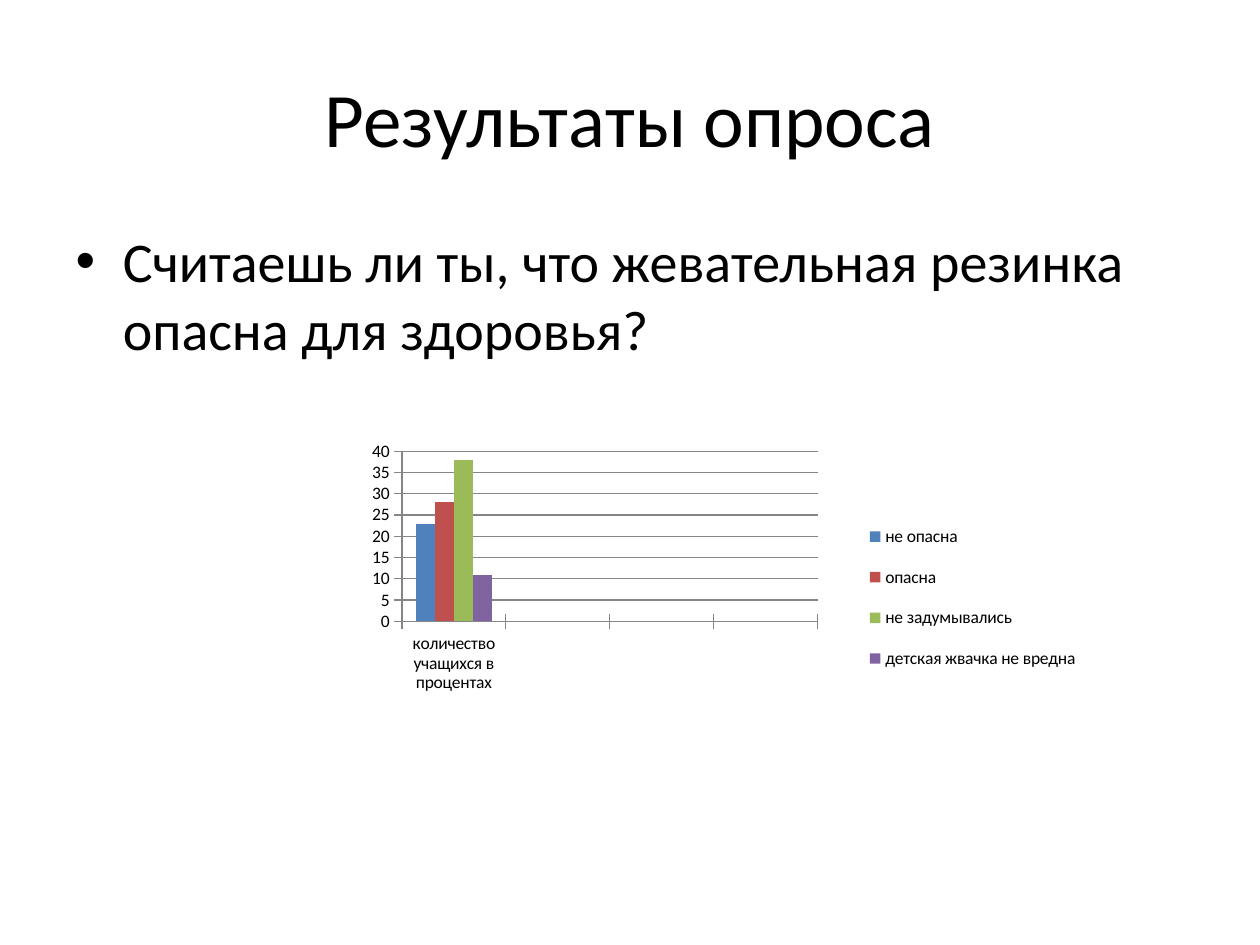
import dataclasses

import lxml.etree
import pptx
import pptx.chart.data
import pptx.dml.color
import pptx.enum.chart
import pptx.enum.text
import pptx.oxml.ns
import pptx.util

Inches = pptx.util.Inches
Pt = pptx.util.Pt


@dataclasses.dataclass(frozen=True)
class Theme:
    font: str = "Calibri"
    text: str = "000000"
    grid: str = "868686"
    series: tuple = ("4F81BD", "C0504D", "9BBB59", "8064A2")
    title_size: int = 44
    body_size: int = 32
    chart_size: int = 10


THEME = Theme()
CATEGORIES = ("количество учащихся в процентах", "", "", "")
ANSWERS = (
    ("не опасна", 23),
    ("опасна", 28),
    ("не задумывались", 38),
    ("детская жвачка не вредна", 11),
)


def rgb(value):
    return pptx.dml.color.RGBColor.from_string(value)


def style_font(font, size):
    font.name = THEME.font
    font.size = Pt(size)
    font.color.rgb = rgb(THEME.text)


def fill_placeholder(sp, box, text, size, anchor):
    sp.left, sp.top, sp.width, sp.height = (Inches(v) for v in box)
    tf = sp.text_frame
    tf.text = text
    tf.word_wrap = True
    tf.vertical_anchor = anchor
    p = tf.paragraphs[0]
    style_font(p.runs[0].font, size)
    return p


def add_title(slide, box, text):
    p = fill_placeholder(slide.shapes.title, box, text, THEME.title_size,
                         pptx.enum.text.MSO_ANCHOR.MIDDLE)
    p.alignment = pptx.enum.text.PP_ALIGN.CENTER


def add_question(slide, box, text):
    # The bullet and hanging indent come from the body placeholder
    p = fill_placeholder(slide.placeholders[1], box, text, THEME.body_size,
                         pptx.enum.text.MSO_ANCHOR.TOP)
    p.space_before = Pt(0)


def set_layout(parent, position, fractions, inner=False):
    """Place a chart part by fractions of the chart area: x, y, w, h."""
    qn = pptx.oxml.ns.qn
    for old in parent.findall(qn("c:layout")):
        parent.remove(old)
    layout = lxml.etree.Element(qn("c:layout"))
    manual = lxml.etree.SubElement(layout, qn("c:manualLayout"))
    settings = [("layoutTarget", "inner")] if inner else []
    settings += [("xMode", "edge"), ("yMode", "edge")]
    settings += zip("xywh", fractions)
    for tag, value in settings:
        lxml.etree.SubElement(manual, qn("c:" + tag)).set("val", str(value))
    parent.insert(position, layout)


def add_survey_chart(slide, box):
    data = pptx.chart.data.CategoryChartData()
    data.categories = CATEGORIES
    for name, value in ANSWERS:
        data.add_series(name, (value, None, None, None))
    chart = slide.shapes.add_chart(
        pptx.enum.chart.XL_CHART_TYPE.COLUMN_CLUSTERED,
        *(Inches(v) for v in box), data).chart
    chart.has_title = False
    style_font(chart.font, THEME.chart_size)

    # Columns
    plot = chart.plots[0]
    plot.gap_width = 150
    plot.overlap = 0
    plot.vary_by_categories = False
    for series, color in zip(plot.series, THEME.series):
        series.format.fill.solid()
        series.format.fill.fore_color.rgb = rgb(color)

    # Axes and gridlines
    value_axis = chart.value_axis
    value_axis.minimum_scale, value_axis.maximum_scale = 0, 40
    value_axis.major_unit = 5
    value_axis.has_major_gridlines = True
    for axis in (chart.category_axis, value_axis):
        axis.major_tick_mark = pptx.enum.chart.XL_TICK_MARK.CROSS
        axis.minor_tick_mark = pptx.enum.chart.XL_TICK_MARK.NONE
    for part in (chart.category_axis, value_axis, value_axis.major_gridlines):
        part.format.line.color.rgb = rgb(THEME.grid)
        part.format.line.width = Pt(0.75)

    # Legend and plot area
    chart.has_legend = True
    legend = chart.legend
    legend.position = pptx.enum.chart.XL_LEGEND_POSITION.RIGHT
    legend.include_in_layout = False
    plot_area = chart.element.find(".//" + pptx.oxml.ns.qn("c:plotArea"))
    set_layout(plot_area, 0, (0.06, 0.06, 0.55, 0.5), inner=True)
    legend_xml = chart.element.find(".//" + pptx.oxml.ns.qn("c:legend"))
    set_layout(legend_xml, 1, (0.64, 0.22, 0.35, 0.54))


def main():
    prs = pptx.Presentation()
    prs.slide_width, prs.slide_height = Inches(10), Inches(7.5)
    slide = prs.slides.add_slide(prs.slide_layouts[1])
    add_title(slide, (0.5, 0.3, 9, 1.25), "Результаты опроса")
    add_question(slide, (0.5, 1.75, 9, 4.95),
                 "Считаешь ли ты, что жевательная резинка опасна для здоровья?")
    add_survey_chart(slide, (2.83, 3.42, 6, 2.7))
    prs.save("out.pptx")


if __name__ == "__main__":
    main()
